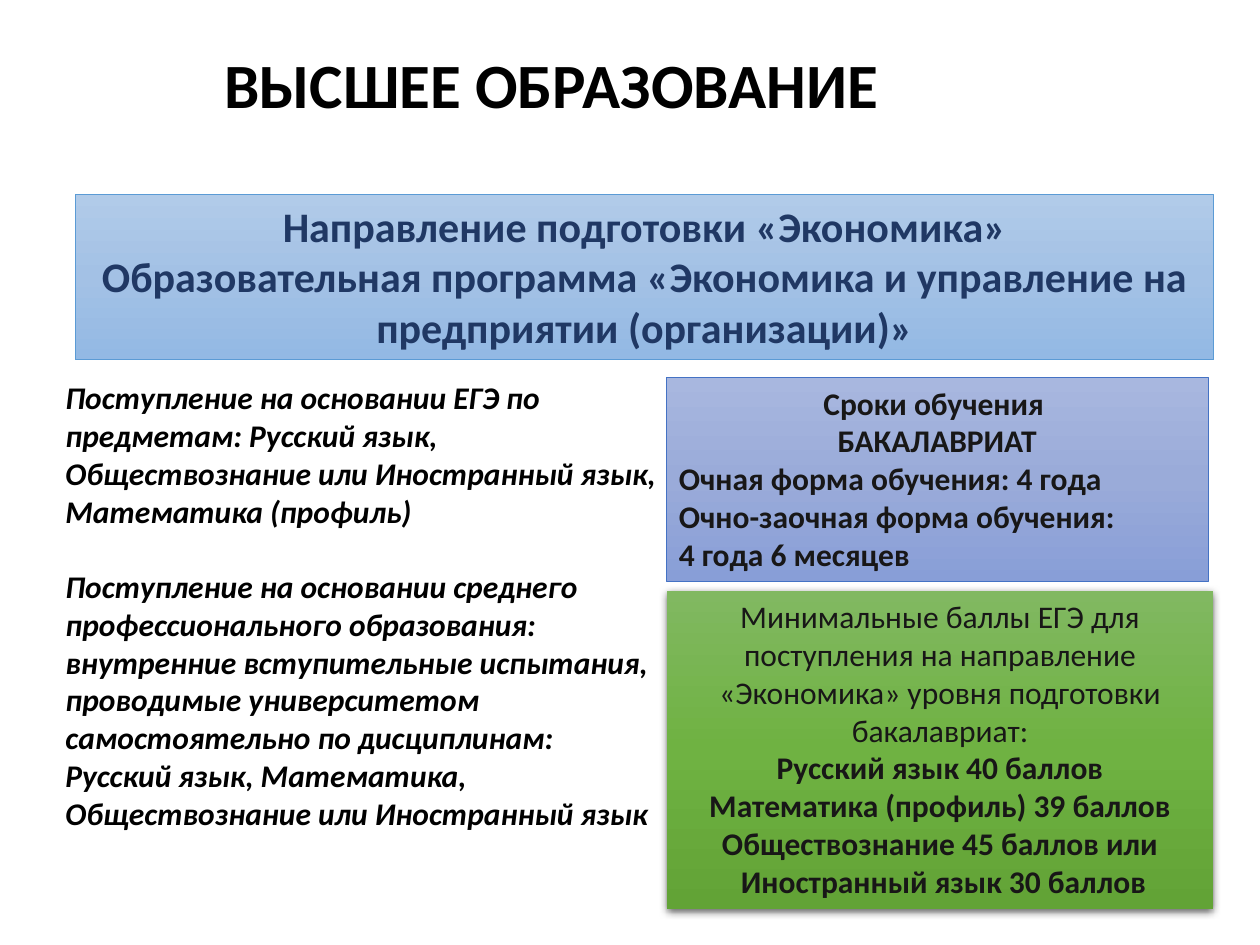
"""Build a slide on the higher-education programme in economics."""
from copy import deepcopy

from lxml import etree
from pptx import Presentation
from pptx.dml.color import RGBColor
from pptx.enum.shapes import MSO_SHAPE
from pptx.enum.text import MSO_ANCHOR, MSO_AUTO_SIZE, PP_ALIGN as Align
from pptx.oxml import parse_xml
from pptx.oxml.ns import nsdecls, qn
from pptx.util import Pt


def color(value):
    """Turn a hex string into a colour."""
    return RGBColor.from_string(value)


def write_text(shape, lines, size=18, ink="000000", italic=False, align=Align.LEFT,
               anchor=MSO_ANCHOR.TOP, spacing=1.0):
    """Fill a shape with (text, format overrides) lines."""
    frame = shape.text_frame
    frame.word_wrap = True
    frame.auto_size = MSO_AUTO_SIZE.NONE
    frame.vertical_anchor = anchor
    for index, (text, changes) in enumerate(lines):
        paragraph = frame.add_paragraph() if index else frame.paragraphs[0]
        properties = paragraph._p.get_or_add_pPr()
        properties.set("marL", "0")
        properties.set("indent", "0")
        etree.SubElement(properties, qn("a:buNone"))
        paragraph.alignment = changes.get("align", align)
        paragraph.line_spacing = spacing
        paragraph.space_before = Pt(changes.get("gap", 0))
        paragraph.space_after = Pt(0)
        run = paragraph.add_run()
        run.text = text
        run.font.name = "Calibri"
        run.font.size = Pt(size)
        run.font.bold = changes.get("bold", True)
        run.font.italic = italic
        run.font.color.rgb = color(ink)


presentation = Presentation()
presentation.slide_width, presentation.slide_height = Pt(720), Pt(540)
slide = presentation.slides.add_slide(presentation.slide_layouts[1])

title = slide.shapes.title
title.left, title.top, title.width, title.height = Pt(8), Pt(8), Pt(614), Pt(85)
write_text(title, [("ВЫСШЕЕ ОБРАЗОВАНИЕ", {})], size=36, align=Align.CENTER,
           anchor=MSO_ANCHOR.MIDDLE, spacing=0.9)

admission = slide.placeholders[1]
admission.left, admission.top, admission.width, admission.height = Pt(30.2), Pt(212.5), Pt(350), Pt(288)
admission.text_frame.margin_right = Pt(0)
write_text(admission, [
    ("Поступление на основании ЕГЭ по предметам: Русский язык, Обществознание "
     "или Иностранный язык, Математика (профиль)", {}),
    ("Поступление на основании среднего профессионального образования: внутренние "
     "вступительные испытания, проводимые университетом самостоятельно по дисциплинам:",
     {"gap": 21.5}),
    ("Русский язык, Математика, Обществознание или Иностранный язык", {}),
], italic=True)

centered = {"align": Align.CENTER}
panels = [
    ((380.8, 215.7, 309.6, 116.6), ("A8B7DF", "9AABD9", "889ED7"), "4472C4", [
        ("Сроки обучения ", centered),
        ("БАКАЛАВРИАТ", centered),
        ("Очная форма обучения: 4 года", {}),
        ("Очно-заочная форма обучения:", {}),
        ("4 года 6 месяцев", {}),
    ], {"ink": "181717"}),
    ((381.3, 337.7, 311.8, 181.7), ("81B861", "6FB242", "62A336"), None, [
        ("Минимальные баллы ЕГЭ для поступления на направление «Экономика» "
         "уровня подготовки бакалавриат:", {"bold": False}),
        ("Русский язык 40 баллов", {}),
        ("Математика (профиль) 39 баллов", {}),
        ("Обществознание 45 баллов или", {}),
        (" Иностранный язык 30 баллов", {}),
    ], {"ink": "181717", "align": Align.CENTER}),
    ((43, 111, 650.6, 94.5), ("B1CBE9", "A3C1E5", "93B9E4"), "5B9BD5", [
        ("Направление подготовки «Экономика»", {}),
        ("Образовательная программа «Экономика и управление на предприятии (организации)»", {}),
    ], {"size": 24, "ink": "203864", "align": Align.CENTER}),
]

for box, shades, outline, lines, text_format in panels:
    panel = slide.shapes.add_shape(MSO_SHAPE.RECTANGLE, *map(Pt, box))
    panel.shadow.inherit = False
    panel.fill.gradient()
    panel.fill.gradient_angle = 270
    first_stop = panel._element.spPr.find(".//" + qn("a:gs"))
    first_stop.addnext(deepcopy(first_stop))
    for stop, position, shade in zip(panel.fill.gradient_stops, (0, 0.5, 1), shades):
        stop.position = position
        stop.color.rgb = color(shade)
    if outline:
        panel.line.color.rgb = color(outline)
        panel.line.width = Pt(0.5)
    else:
        panel.line.fill.background()
        panel._element.spPr.find(qn("a:effectLst")).append(parse_xml(
            f'<a:outerShdw {nsdecls("a")} blurRad="{Pt(4.5)}" dist="{Pt(1.5)}" dir="5400000" '
            'algn="ctr" rotWithShape="0"><a:srgbClr val="000000"><a:alpha val="63000"/>'
            '</a:srgbClr></a:outerShdw>'))
    write_text(panel, lines, **text_format)

presentation.save("out.pptx")
